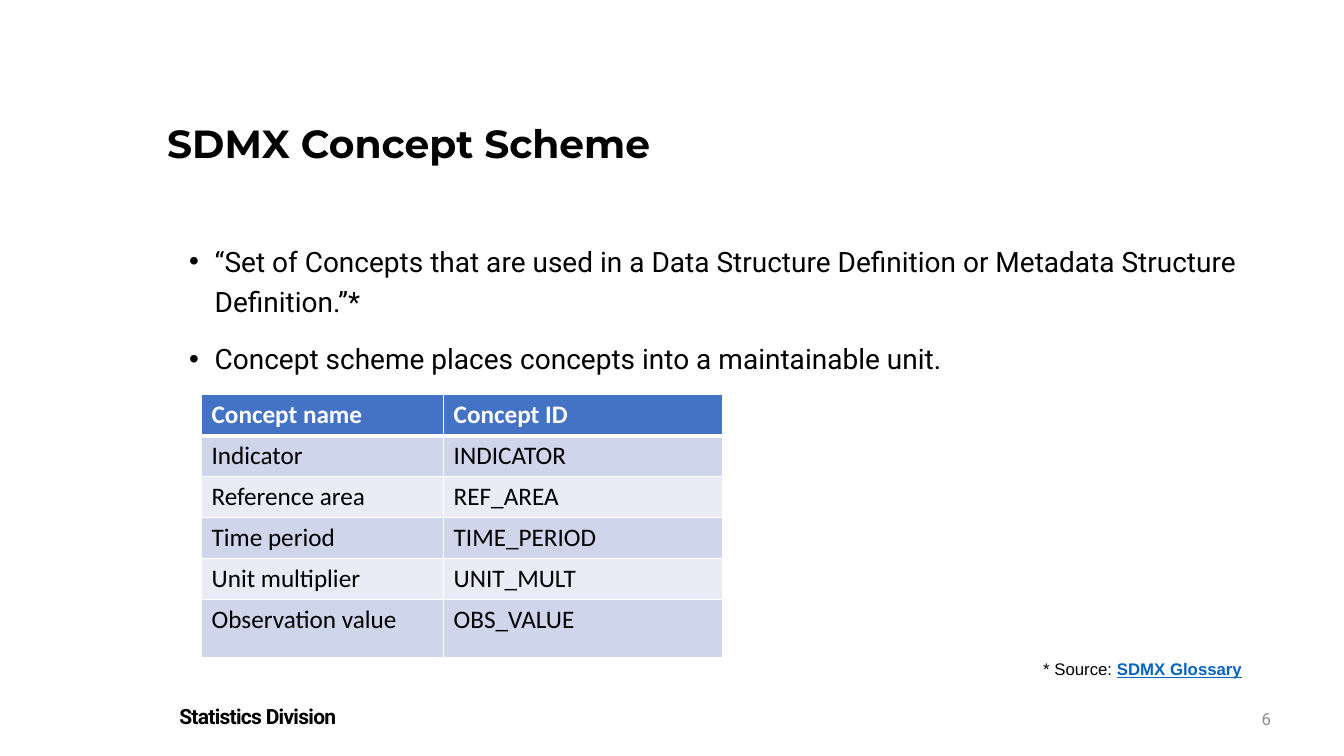
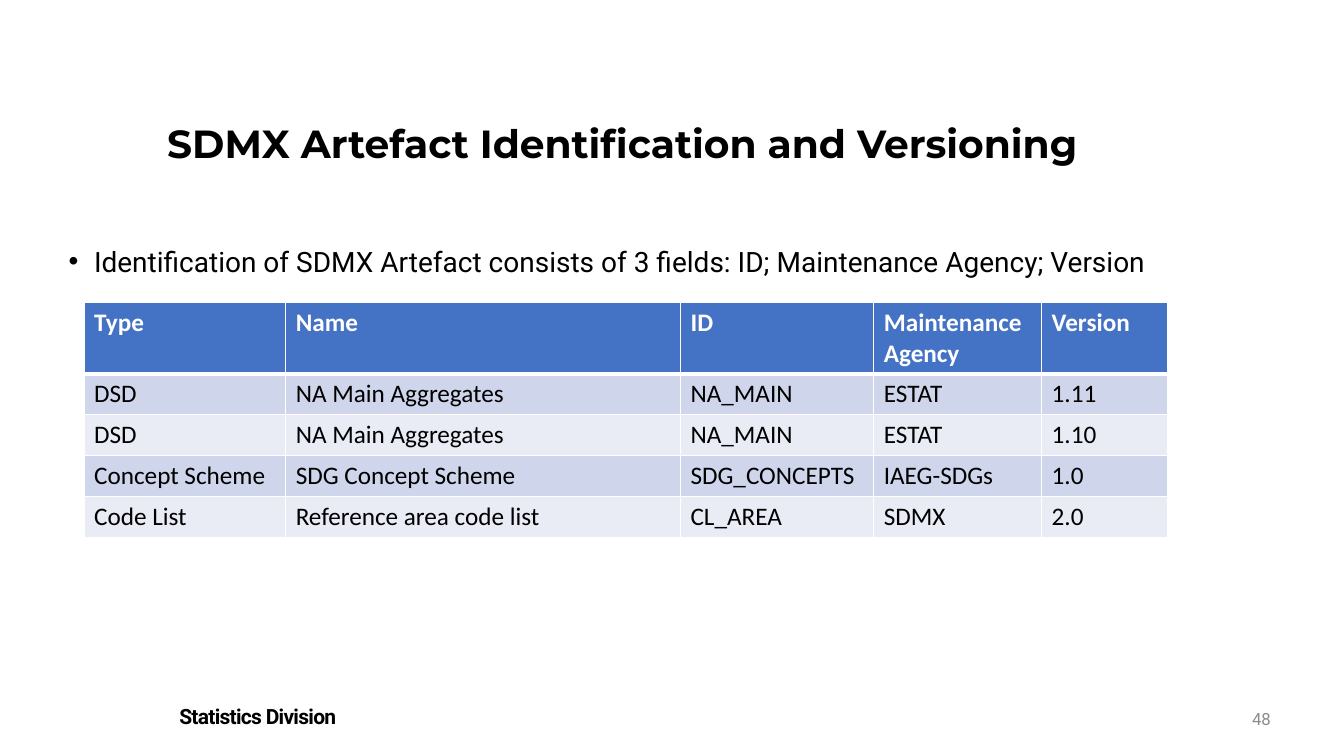
from dataclasses import dataclass
from typing import NamedTuple

from lxml.etree import SubElement
from pptx import Presentation
from pptx.dml.color import RGBColor
from pptx.enum.shapes import MSO_SHAPE as Preset
from pptx.enum.text import MSO_ANCHOR as Anchor, MSO_AUTO_SIZE as AutoSize, PP_ALIGN as Align
from pptx.oxml.ns import qn
from pptx.util import Cm, Pt


@dataclass(frozen=True)
class Theme:
    # Colours
    text: str = "000000"
    muted: str = "8C8C8C"
    link: str = "0563C1"
    white: str = "FFFFFF"
    header: str = "4472C4"
    bands: tuple = ("CFD5EA", "E9EBF5")
    # Fonts
    title_font: str = "Montserrat"
    body_font: str = "Roboto"
    table_font: str = "Calibri"
    note_font: str = "Arial"
    # Type sizes and line widths in points
    title_size: int = 28
    body_size: int = 20
    table_size: int = 18
    footer_size: int = 15
    small_size: int = 12
    thin: int = 1
    thick: int = 3


class Box(NamedTuple):
    """Lengths in centimetres."""
    left: float
    top: float
    width: float
    height: float

    def lengths(self):
        return [Cm(value) for value in self]


THEME = Theme()
SLIDE_WIDTH, SLIDE_HEIGHT = 33.87, 19.05
TITLE_ONLY = 5
TITLE_BOX = Box(3.96, 3.02, 27.58, 2.31)
FOOTER_BOX = Box(4.27, 17.6, 28.01, 1.02)
BODY_TOP, BODY_HEIGHT, BODY_RIGHT = 5.86, 11.3, 31.54
ROW_HEIGHT = 1.03


def add_run(paragraph, text, font=THEME.body_font, size=THEME.body_size,
            color=THEME.text, bold=False, underline=False, spacing=None):
    run = paragraph.add_run()
    run.text = text
    run.font.name = font
    run.font.size = Pt(size)
    run.font.color.rgb = RGBColor.from_string(color)
    run.font.bold = bold
    run.font.underline = underline
    if spacing is not None:
        run.font._element.set("spc", str(round(spacing * 100)))


def set_fill(target, color):
    target.fill.solid()
    target.fill.fore_color.rgb = RGBColor.from_string(color)


def add_text_frame(slide, box):
    frame = slide.shapes.add_textbox(*box.lengths()).text_frame
    frame.word_wrap = True
    return frame


def add_title(slide, text, box=TITLE_BOX):
    title = slide.shapes.title
    title.left, title.top, title.width, title.height = box.lengths()
    frame = title.text_frame
    frame.auto_size = AutoSize.NONE
    frame.vertical_anchor = Anchor.TOP
    paragraph = frame.paragraphs[0]
    paragraph.alignment = Align.LEFT
    paragraph.line_spacing = 0.9
    add_run(paragraph, text, font=THEME.title_font, size=THEME.title_size, bold=True)


def add_footer(slide, number, box=FOOTER_BOX):
    # Division name on a white band
    band_box = box._replace(width=14.83, height=0.89)
    band = slide.shapes.add_shape(Preset.RECTANGLE, *band_box.lengths())
    band.shadow.inherit = False
    set_fill(band, THEME.white)
    band.line.fill.background()
    band.text_frame.word_wrap = True
    band.text_frame.vertical_anchor = Anchor.TOP
    paragraph = band.text_frame.paragraphs[0]
    paragraph.alignment = Align.LEFT
    add_run(paragraph, "Statistics Division",
            size=THEME.footer_size, bold=True, spacing=-0.5)
    # Slide number on the right
    width = 1.63
    number_frame = add_text_frame(
        slide, box._replace(left=box.left + box.width - width, width=width))
    number_frame.vertical_anchor = Anchor.MIDDLE
    paragraph = number_frame.paragraphs[0]
    paragraph.alignment = Align.RIGHT
    add_run(paragraph, str(number), size=THEME.small_size, color=THEME.muted)


def add_bullets(slide, left, items):
    frame = add_text_frame(
        slide, Box(left, BODY_TOP, BODY_RIGHT - left, BODY_HEIGHT))
    for index, item in enumerate(items):
        paragraph = frame.add_paragraph() if index else frame.paragraphs[0]
        properties = paragraph._p.get_or_add_pPr()
        indent = Cm(0.64)
        properties.set("marL", str(indent))
        properties.set("indent", str(-indent))
        SubElement(properties, qn("a:buFont"), typeface="Arial")
        SubElement(properties, qn("a:buChar"), char="•")
        paragraph.line_spacing = 1.2
        paragraph.space_before = Pt(6 if index else 0)
        paragraph.space_after = Pt(6)
        add_run(paragraph, item)


def set_borders(cell, **widths):
    properties = cell._tc.get_or_add_tcPr()
    for side in "LRTB":
        width = Pt(widths.get(side, THEME.thin))
        line = SubElement(properties, qn(f"a:ln{side}"), w=str(width))
        fill = SubElement(line, qn("a:solidFill"))
        SubElement(fill, qn("a:srgbClr"), val=THEME.white)


def format_cell(cell, text, row_index):
    is_header = row_index == 0
    # The heavy rule lies between the header and the first row
    if is_header:
        set_borders(cell, B=THEME.thick)
    elif row_index == 1:
        set_borders(cell, T=THEME.thick)
    else:
        set_borders(cell)
    set_fill(cell, THEME.header if is_header else THEME.bands[(row_index - 1) % 2])
    add_run(cell.text_frame.paragraphs[0], text, font=THEME.table_font,
            size=THEME.table_size, bold=is_header,
            color=THEME.white if is_header else THEME.text)


def add_banded_table(slide, left, top, widths, rows, tall_rows):
    """tall_rows maps a row index to its height; other rows share one height."""
    heights = [tall_rows.get(index, ROW_HEIGHT) for index in range(len(rows))]
    box = Box(left, top, sum(widths), sum(heights))
    table = slide.shapes.add_table(len(rows), len(widths), *box.lengths()).table
    for column, width in zip(table.columns, widths):
        column.width = Cm(width)
    for row_index, values in enumerate(rows):
        table.rows[row_index].height = Cm(heights[row_index])
        for column_index, value in enumerate(values):
            format_cell(table.cell(row_index, column_index), value, row_index)


def add_source_note(slide, box):
    paragraph = add_text_frame(slide, box).paragraphs[0]
    note = dict(font=THEME.note_font, size=THEME.small_size)
    add_run(paragraph, "* Source: ", **note)
    add_run(paragraph, "SDMX Glossary", color=THEME.link, bold=True, underline=True, **note)


def add_base_slide(presentation, title, number):
    slide = presentation.slides.add_slide(presentation.slide_layouts[TITLE_ONLY])
    add_footer(slide, number)
    add_title(slide, title)
    return slide


def add_concept_scheme_slide(presentation):
    slide = add_base_slide(presentation, "SDMX Concept Scheme", 6)
    add_bullets(slide, 4.52, [
        "“Set of Concepts that are used in a Data Structure Definition "
        "or Metadata Structure Definition.”*",
        "Concept scheme places concepts into a maintainable unit.",
    ])
    rows = [
        ("Concept name", "Concept ID"),
        ("Indicator", "INDICATOR"),
        ("Reference area", "REF_AREA"),
        ("Time period", "TIME_PERIOD"),
        ("Unit multiplier", "UNIT_MULT"),
        ("Observation value", "OBS_VALUE"),
    ]
    add_banded_table(slide, 5.08, 9.95, (6.1, 7.04), rows, {5: 1.47})
    add_source_note(slide, Box(26.04, 16.48, 5.84, 0.77))


def add_versioning_slide(presentation):
    slide = add_base_slide(
        presentation, "SDMX Artefact Identification and Versioning", 48)
    add_bullets(slide, 1.48, [
        "Identification of SDMX Artefact consists of 3 fields: "
        "ID; Maintenance Agency; Version",
    ])
    rows = [
        ("Type", "Name", "ID", "Maintenance Agency", "Version"),
        ("DSD", "NA Main Aggregates", "NA_MAIN", "ESTAT", "1.11"),
        ("DSD", "NA Main Aggregates", "NA_MAIN", "ESTAT", "1.10"),
        ("Concept Scheme", "SDG Concept Scheme", "SDG_CONCEPTS", "IAEG-SDGs", "1.0"),
        ("Code List", "Reference area code list", "CL_AREA", "SDMX", "2.0"),
    ]
    add_banded_table(slide, 2.12, 7.62, (5.08, 9.95, 4.87, 4.23, 3.18), rows, {0: 1.8})


def main():
    presentation = Presentation()
    presentation.slide_width = Cm(SLIDE_WIDTH)
    presentation.slide_height = Cm(SLIDE_HEIGHT)
    add_concept_scheme_slide(presentation)
    add_versioning_slide(presentation)
    presentation.save("out.pptx")


if __name__ == "__main__":
    main()
